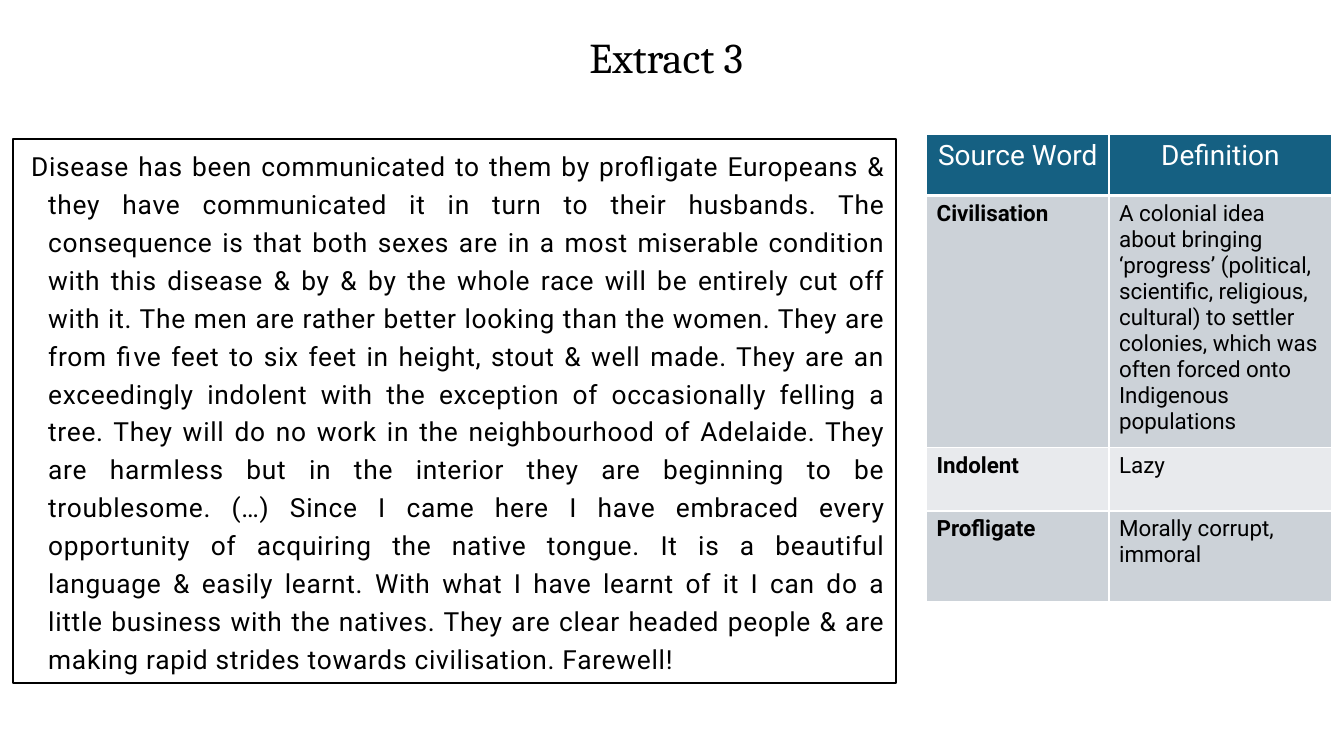
from lxml import etree
from pptx import Presentation
from pptx.dml.color import RGBColor
from pptx.enum import shapes, text
from pptx.oxml.ns import qn
from pptx.util import Inches, Pt


def color(value):
    return RGBColor.from_string(value)


def write(paragraph, words, hue, **formats):
    paragraph.text = words
    run = paragraph.runs[0]
    run.font.color.rgb = color(hue)
    for name, value in formats.items():
        setattr(run.font, name, value)
    return run


presentation = Presentation()
presentation.slide_width, presentation.slide_height = Inches(13.33), Inches(7.5)
slide = presentation.slides.add_slide(presentation.slide_layouts[5])

# Title
title = slide.shapes.title
title.left, title.top = Inches(4.31), Inches(0.26)
title.width, title.height = Inches(4.6), Inches(0.61)
title.text_frame.auto_size = text.MSO_AUTO_SIZE.NONE
title.text_frame.vertical_anchor = text.MSO_ANCHOR.MIDDLE
write(title.text_frame.paragraphs[0], "Extract 3", "000000", name="Cambria", size=Pt(30.3))
title.text_frame.paragraphs[0].alignment = text.PP_ALIGN.CENTER

# Framed extract
sentences = [
    "Disease has been communicated to them by profligate Europeans & they have "
    "communicated it in turn to their husbands.",
    "The consequence is that both sexes are in a most miserable condition with this "
    "disease & by & by the whole race will be entirely cut off with it.",
    "The men are rather better looking than the women.",
    "They are from five feet to six feet in height, stout & well made.",
    "They are an exceedingly indolent with the exception of occasionally felling a tree.",
    "They will do no work in the neighbourhood of Adelaide.",
    "They are harmless but in the interior they are beginning to be troublesome.",
    "(…) Since I came here I have embraced every opportunity of acquiring the native tongue.",
    "It is a beautiful language & easily learnt.",
    "With what I have learnt of it I can do a little business with the natives.",
    "They are clear headed people & are making rapid strides towards civilisation.",
    "Farewell!",
]
extract = slide.shapes.add_shape(
    shapes.MSO_SHAPE.RECTANGLE, Inches(0.13), Inches(1.38), Inches(8.76), Inches(5.4))
extract.shadow.inherit = False
extract.fill.background()
extract.line.color.rgb = color("000000")
extract.line.width = Pt(1.5)
extract.text_frame.word_wrap = True
extract.text_frame.vertical_anchor = text.MSO_ANCHOR.TOP
paragraph = extract.text_frame.paragraphs[0]
run = write(paragraph, " ".join(sentences), "000000", name="Roboto", size=Pt(18.8))
run.font._element.set("spc", "50")
paragraph.alignment = text.PP_ALIGN.JUSTIFY
paragraph.line_spacing = 1.2
paragraph.space_after = Pt(8)
properties = paragraph._p.get_or_add_pPr()
properties.set("marL", str(Inches(0.25)))
properties.set("indent", str(Inches(-0.17)))

# Glossary table
glossary = [
    ("Source Word", "Definition"),
    ("Civilisation", "A colonial idea about bringing ‘progress’ (political, scientific, "
     "religious, cultural) to settler colonies, which was often forced onto Indigenous "
     "populations"),
    ("Indolent", "Lazy"),
    ("Profligate", "Morally corrupt, immoral"),
]
row_heights = [0.61, 2.5, 0.63, 0.9]
row_fills = ["156082", "CCD2D8", "E8EAED", "CCD2D8"]
table = slide.shapes.add_table(
    4, 2, Inches(9.19), Inches(1.33), Inches(4.02), Inches(sum(row_heights))).table
for column, width in zip(table.columns, [1.81, 2.21]):
    column.width = Inches(width)

for row_index, entry in enumerate(glossary):
    table.rows[row_index].height = Inches(row_heights[row_index])
    header = row_index == 0
    for column_index, words in enumerate(entry):
        cell = table.cell(row_index, column_index)
        cell.fill.solid()
        cell.fill.fore_color.rgb = color(row_fills[row_index])
        paragraph = cell.text_frame.paragraphs[0]
        write(paragraph, words, "FFFFFF" if header else "000000", name="Roboto",
              size=Pt(20 if header else 16), bold=not header and column_index == 0)
        paragraph.alignment = text.PP_ALIGN.CENTER if header else text.PP_ALIGN.LEFT

        # White cell borders, heavier under the header
        borders = {"a:lnL": 1, "a:lnR": 1, "a:lnT": 1, "a:lnB": 3 if header else 1}
        if row_index == 1:
            del borders["a:lnT"]
        cell_properties = cell._tc.get_or_add_tcPr()
        for position, (tag, points) in enumerate(borders.items()):
            line = etree.Element(qn(tag), w=str(Pt(points)))
            fill = etree.SubElement(line, qn("a:solidFill"))
            etree.SubElement(fill, qn("a:srgbClr"), val="FFFFFF")
            cell_properties.insert(position, line)

presentation.save("out.pptx")
